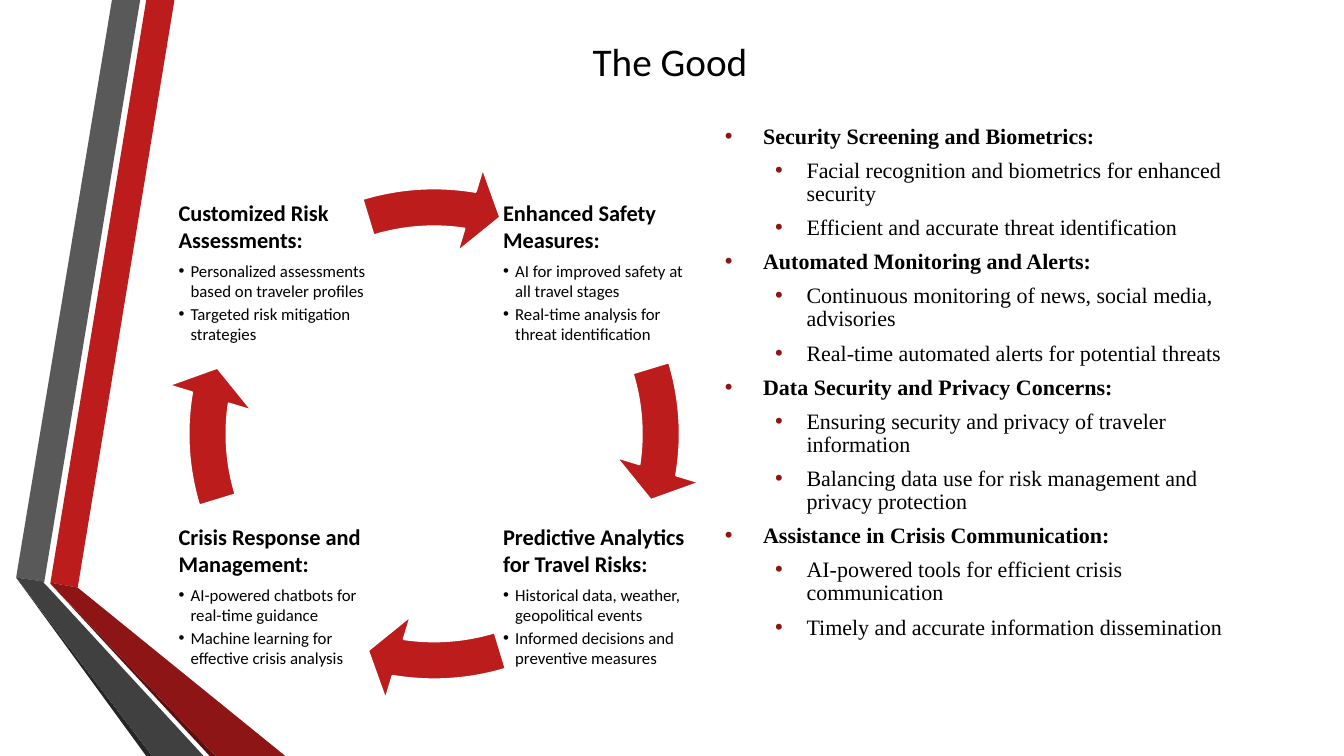
"""Build the slide "The Good": a four-step cycle beside a list of benefits."""
from dataclasses import dataclass

from lxml import etree
from pptx import Presentation
from pptx.dml.color import RGBColor
from pptx.enum.shapes import MSO_SHAPE
from pptx.enum.text import MSO_ANCHOR
from pptx.oxml.ns import qn
from pptx.util import Inches, Pt

CIRCULAR_ARROW = MSO_SHAPE.CIRCULAR_ARROW
TOP, MIDDLE = MSO_ANCHOR.TOP, MSO_ANCHOR.MIDDLE
SLIDE_WIDTH, SLIDE_HEIGHT = Inches(13.33), Inches(7.5)
QUARTER_TURN, FULL_TURN = 54, 216


@dataclass(frozen=True)
class Theme:
    """Hold the colours, fonts and type sizes of the slide."""
    red: str = "BC1C1C"
    dark_red: str = "8D1515"
    deep_red: str = "5E0E0E"
    grey: str = "595959"
    dark_grey: str = "404040"
    deep_grey: str = "262626"
    white: str = "FFFFFF"
    black: str = "000000"
    sans: str = "Calibri"
    serif: str = "Times New Roman"
    title_size: float = 28
    heading_size: float = 16
    detail_size: float = 12
    list_size: float = 15.7


THEME = Theme()

STEP_HEADING = {
    "font": {"name": THEME.sans, "size": Pt(THEME.heading_size), "bold": True},
    "paragraph": {"space_after": Pt(5.6)},
}
STEP_DETAIL = {
    "font": {"name": THEME.sans, "size": Pt(THEME.detail_size), "bold": False},
    "paragraph": {"level": 1, "space_after": Pt(1.8)},
    "bullet": (0.9, 0.9, THEME.black),
}
LIST_HEADING = {
    "font": {"name": THEME.serif, "size": Pt(THEME.list_size), "bold": True},
    "paragraph": {"line_spacing": 0.87, "space_after": Pt(8)},
    "bullet": (2.85, 2.85, THEME.dark_red),
}
LIST_DETAIL = {
    "font": {"name": THEME.serif, "size": Pt(THEME.list_size), "bold": False},
    "paragraph": {"level": 1, "line_spacing": 0.87, "space_after": Pt(8)},
    "bullet": (6.08, 2.33, THEME.dark_red),
}
TITLE = {
    "font": {"name": THEME.sans, "size": Pt(THEME.title_size), "bold": False},
    "paragraph": {},
}

RIBBONS = [
    (THEME.red, [(3.75, 77.07), (5.78, 77.73), (12.98, 0), (10.88, 0)]),
    (THEME.grey, [(10.43, 0), (8.33, 0), (1.2, 76.4), (3.3, 76.93)]),
    (THEME.deep_grey, [(1.2, 76.4), (10.88, 100), (11.33, 100)]),
    (THEME.deep_red, [(3.75, 77.2), (15.6, 100), (16.05, 100)]),
    (THEME.dark_red, [(3.75, 77.07), (3.75, 77.2), (16.05, 100), (21.23, 100), (5.78, 77.73)]),
    (THEME.dark_grey, [(15.15, 100), (3.6, 77.73), (3.23, 77.07), (3.3, 76.93), (1.2, 76.4),
                       (11.33, 100)]),
]

CYCLE_STEPS = [
    (1, 0, "Enhanced Safety Measures:",
     ["AI for improved safety at all travel stages",
      "Real-time analysis for threat identification"]),
    (1, 1, "Predictive Analytics for Travel Risks:",
     ["Historical data, weather, geopolitical events",
      "Informed decisions and preventive measures"]),
    (0, 1, "Crisis Response and Management:",
     ["AI-powered chatbots for real-time guidance",
      "Machine learning for effective crisis analysis"]),
    (0, 0, "Customized Risk Assessments:",
     ["Personalized assessments based on traveler profiles",
      "Targeted risk mitigation strategies"]),
]

BENEFITS = [
    ("Security Screening and Biometrics:",
     ["Facial recognition and biometrics for enhanced security",
      "Efficient and accurate threat identification"]),
    ("Automated Monitoring and Alerts:",
     ["Continuous monitoring of news, social media, advisories",
      "Real-time automated alerts for potential threats"]),
    ("Data Security and Privacy Concerns:",
     ["Ensuring security and privacy of traveler information",
      "Balancing data use for risk management and privacy protection"]),
    ("Assistance in Crisis Communication:",
     ["AI-powered tools for efficient crisis communication",
      "Timely and accurate information dissemination"]),
]


def across(percent):
    """Return a share of the slide's width."""
    return round(SLIDE_WIDTH * percent / 100)


def down(percent):
    """Return a share of the slide's height."""
    return round(SLIDE_HEIGHT * percent / 100)


def frame(left, top, width, height):
    """Turn percentages of the slide into a position and a size."""
    return across(left), down(top), across(width), down(height)


def set_values(target, values):
    """Set each named attribute of the target."""
    for name, value in values.items():
        setattr(target, name, value)


def paint(shape, color):
    """Give a shape a flat fill without shadow or outline."""
    shape.shadow.inherit = False
    shape.fill.solid()
    shape.fill.fore_color.rgb = RGBColor.from_string(color)
    shape.line.fill.background()


def add_bullet(paragraph, margin, hanging, color):
    """Give a paragraph a hanging, coloured bullet."""
    properties = paragraph._p.get_or_add_pPr()
    properties.set("marL", str(across(margin)))
    properties.set("indent", str(-across(hanging)))
    bullet_color = etree.SubElement(properties, qn("a:buClr"))
    etree.SubElement(bullet_color, qn("a:srgbClr"), val=color)
    etree.SubElement(properties, qn("a:buFont"), typeface="Arial")
    etree.SubElement(properties, qn("a:buChar"), char="•")


def add_text(slide, box, lines, anchor=TOP, margin=None):
    """Add a text box with one formatted paragraph per line."""
    text_frame = slide.shapes.add_textbox(*box).text_frame
    set_values(text_frame, {"word_wrap": True, "vertical_anchor": anchor})
    if margin is not None:
        sides = ("left", "top", "right", "bottom")
        set_values(text_frame, {f"margin_{side}": margin for side in sides})
    for index, (text, style) in enumerate(lines):
        paragraph = text_frame.add_paragraph() if index else text_frame.paragraphs[0]
        run = paragraph.add_run()
        run.text = text
        set_values(run.font, style["font"])
        run.font.color.rgb = RGBColor.from_string(THEME.black)
        set_values(paragraph, style["paragraph"])
        if "bullet" in style:
            add_bullet(paragraph, *style["bullet"])


def add_ribbon(slide, color, corners):
    """Add one folded ribbon face from its corners."""
    start, *others = [(across(x), down(y)) for x, y in corners]
    builder = slide.shapes.build_freeform(*start)
    builder.add_line_segments(others, close=True)
    paint(builder.convert_to_shape(), color)


def add_cycle_arrow(slide, turn):
    """Add one arc of the cycle, turned by quarter circles."""
    arrow = slide.shapes.add_shape(CIRCULAR_ARROW, *frame(12.23, 21.73, 40.14, 71.33))
    paint(arrow, THEME.red)
    arrow.line.color.rgb = RGBColor.from_string(THEME.white)
    arrow.line.width = Pt(1.25)
    head_end = 5.5 + turn * QUARTER_TURN
    tail_start = (205.85 + turn * QUARTER_TURN) % FULL_TURN
    for index, value in enumerate((0.07, 4.65, head_end, tail_start, 0.08)):
        arrow.adjustments[index] = value


def with_details(heading, details, heading_style, detail_style):
    """Pair a heading and its details with their styles."""
    return [(heading, heading_style)] + [(detail, detail_style) for detail in details]


def main():
    """Build and save the slide."""
    presentation = Presentation()
    set_values(presentation, {"slide_width": SLIDE_WIDTH, "slide_height": SLIDE_HEIGHT})
    slide = presentation.slides.add_slide(presentation.slide_layouts[6])
    for color, corners in RIBBONS:
        add_ribbon(slide, color, corners)
    for turn, (column, row, heading, details) in enumerate(CYCLE_STEPS):
        box = frame(13.13 + column * 24.15, 23.2 + row * 42.93, 14.25, 25.33)
        lines = with_details(heading, details, STEP_HEADING, STEP_DETAIL)
        add_text(slide, box, lines, MIDDLE, Inches(0.02))
        add_cycle_arrow(slide, turn)
    benefit_lines = [line for heading, details in BENEFITS
                     for line in with_details(heading, details, LIST_HEADING, LIST_DETAIL)]
    add_text(slide, frame(53.19, 16, 40.14, 83.2), benefit_lines)
    add_text(slide, frame(43.36, 4.27, 13.2, 7.6), [("The Good", TITLE)])
    presentation.save("out.pptx")


if __name__ == "__main__":
    main()
